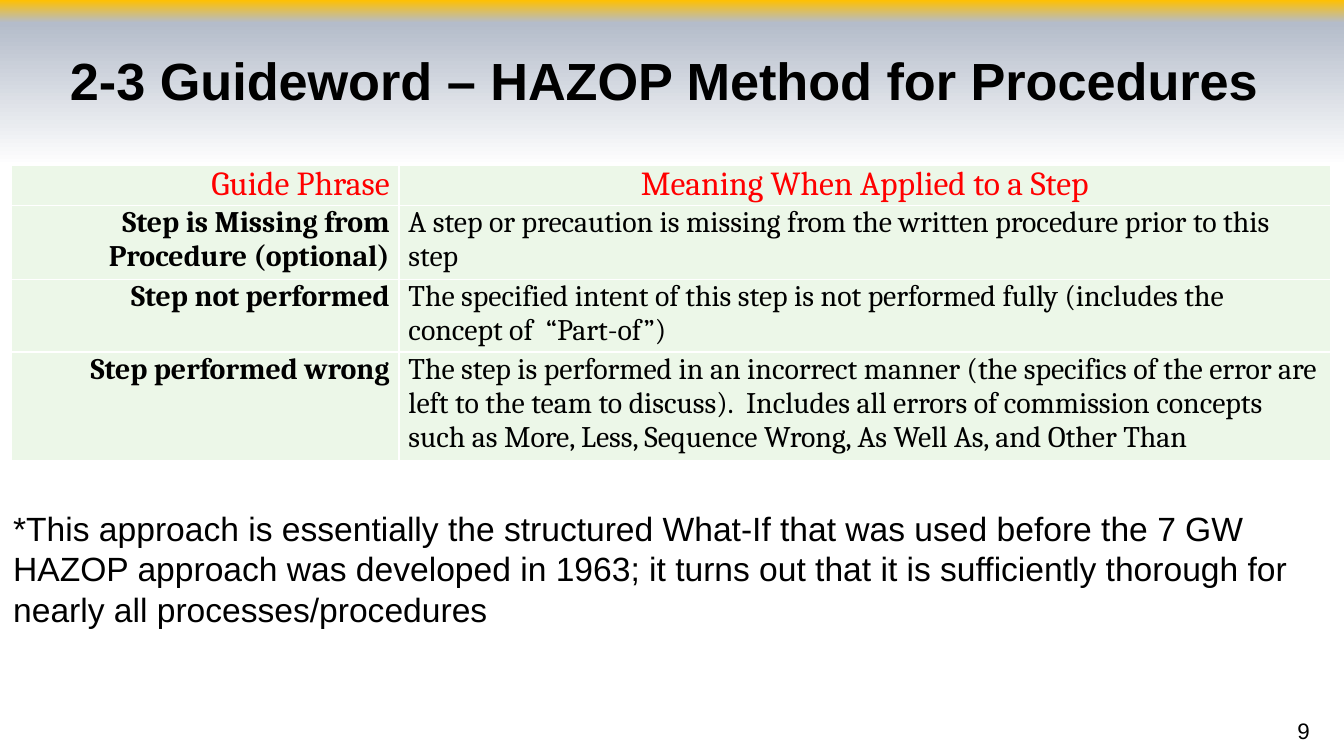
"""Build a slide on the guide phrases of the HAZOP method for procedures."""
from dataclasses import dataclass

from lxml import etree
from pptx import Presentation
from pptx.dml.color import RGBColor
from pptx.enum import text
from pptx.oxml import ns
from pptx.util import Inches, Pt

COLORS = {"gold": "FFC000", "haze": "B4BCCA", "white": "FFFFFF",
          "black": "000000", "red": "FF0000", "mint": "ECF7E8"}
BACKGROUND_STOPS = [(0, "gold"), (3, "haze"), (22, "white"), (100, "white")]
COLUMN_WIDTHS = (2.89, 6.93)
ROW_HEIGHTS = (0.3, 0.55, 0.54, 0.81)
LEFT, CENTER, RIGHT = (text.PP_ALIGN.LEFT, text.PP_ALIGN.CENTER,
                       text.PP_ALIGN.RIGHT)
GUIDE_PHRASES = [
    ("Guide Phrase", "Meaning When Applied to a Step"),
    ("Step is Missing from Procedure (optional)",
     "A step or precaution is missing from the written procedure prior to this step"),
    ("Step not performed",
     "The specified intent of this step is not performed fully "
     "(includes the concept of  “Part-of”)"),
    ("Step performed wrong",
     "The step is performed in an incorrect manner (the specifics of the error are "
     "left to the team to discuss).  Includes all errors of commission concepts "
     "such as More, Less, Sequence Wrong, As Well As, and Other Than"),
]


@dataclass(frozen=True)
class Style:
    """Look of a piece of text."""
    size: int
    font: str = "Arial"
    color: str = "black"
    bold: bool = False
    align: text.PP_ALIGN = LEFT


def write(frame, words: str, style: Style) -> None:
    """Write one styled run into a text frame."""
    para = frame.paragraphs[0]
    para.alignment = style.align
    span = para.add_run()
    span.text = words
    span.font.size = Pt(style.size)
    span.font.name = style.font
    span.font.bold = style.bold
    span.font.color.rgb = RGBColor.from_string(COLORS[style.color])


def set_insets(target, left: float, top: float, right: float, bottom: float) -> None:
    """Set the inner margins of a cell or text frame in inches."""
    target.margin_left, target.margin_top = Inches(left), Inches(top)
    target.margin_right, target.margin_bottom = Inches(right), Inches(bottom)


def place(shape, left: float, top: float, width: float, height: float) -> None:
    """Position a shape in inches."""
    shape.left, shape.top = Inches(left), Inches(top)
    shape.width, shape.height = Inches(width), Inches(height)


def add_color(parent, color: str) -> None:
    """Append an RGB colour element."""
    etree.SubElement(parent, ns.qn("a:srgbClr"), val=COLORS[color])


def paint_background(page) -> None:
    """Fill the page with the vertical gradient."""
    fill = page.background.fill
    fill.gradient()
    fill.gradient_angle = 270
    stops = page.element.xpath(".//a:gsLst")[0]
    for stop in list(stops):
        stops.remove(stop)
    for percent, color in BACKGROUND_STOPS:
        stop = etree.SubElement(stops, ns.qn("a:gs"), pos=str(percent * 1000))
        add_color(stop, color)


def add_title(page, words: str) -> None:
    """Fill and format the title placeholder."""
    title = page.shapes.title
    place(title, 0.42, 0.06, 9.33, 1.06)
    frame = title.text_frame
    frame.word_wrap = True
    frame.auto_size = text.MSO_AUTO_SIZE.NONE
    frame.vertical_anchor = text.MSO_ANCHOR.MIDDLE
    set_insets(frame, 0.1, 0.05, 0.05, 0.05)
    write(frame, words, Style(28, bold=True))


def add_text(page, words: str, bounds: tuple[float, float, float, float],
             style: Style):
    """Add a wrapping text box and return its frame."""
    box = page.shapes.add_textbox(*map(Inches, bounds))
    box.text_frame.word_wrap = True
    write(box.text_frame, words, style)
    return box.text_frame


def format_cell(cell) -> None:
    """Give a cell its margins, white borders and fill."""
    set_insets(cell, 0.07, 0, 0.07, 0)
    properties = cell._tc.get_or_add_tcPr()
    for side in ("lnL", "lnR", "lnT", "lnB"):
        line = etree.SubElement(properties, ns.qn(f"a:{side}"), w=str(Pt(1)))
        add_color(etree.SubElement(line, ns.qn("a:solidFill")), "white")
    cell.fill.solid()
    cell.fill.fore_color.rgb = RGBColor.from_string(COLORS["mint"])


def add_phrase_table(page) -> None:
    """Add the table of guide phrases and their meanings."""
    table = page.shapes.add_table(
        len(GUIDE_PHRASES), len(COLUMN_WIDTHS), Inches(0.08), Inches(1.23),
        Inches(sum(COLUMN_WIDTHS)), Inches(sum(ROW_HEIGHTS))).table
    table.horz_banding = False
    for column, width in zip(table.columns, COLUMN_WIDTHS):
        column.width = Inches(width)
    header = [Style(18, "Cambria", "red", align=align) for align in (RIGHT, CENTER)]
    body = [Style(16, "Cambria", bold=True, align=RIGHT), Style(16, "Cambria")]
    for index, (row, phrases) in enumerate(zip(table.rows, GUIDE_PHRASES)):
        row.height = Inches(ROW_HEIGHTS[index])
        styles = body if index else header
        for cell, words, style in zip(row.cells, phrases, styles):
            format_cell(cell)
            write(cell.text_frame, words, style)


def main() -> None:
    """Build and save the deck."""
    deck = Presentation()
    deck.slide_width = Inches(10)
    deck.slide_height = deck.slide_width * 9 // 16
    page = deck.slides.add_slide(deck.slide_layouts[5])
    paint_background(page)
    add_title(page, "2-3 Guideword – HAZOP Method for Procedures")
    note = add_text(
        page, "*This approach is essentially the structured What-If that was used "
        "before the 7 GW HAZOP approach was developed in 1963; it turns out that it "
        "is sufficiently thorough for nearly all processes/procedures",
        (0, 3.73, 9.9, 1.01), Style(18))
    note.auto_size = text.MSO_AUTO_SIZE.SHAPE_TO_FIT_TEXT
    add_phrase_table(page)
    number = add_text(page, "9", (9.5, 5.31, 0.4, 0.23), Style(12, align=CENTER))
    number.vertical_anchor = text.MSO_ANCHOR.BOTTOM
    set_insets(number, 0.1, 0.05, 0.1, 0)
    deck.save("out.pptx")


if __name__ == "__main__":
    main()
